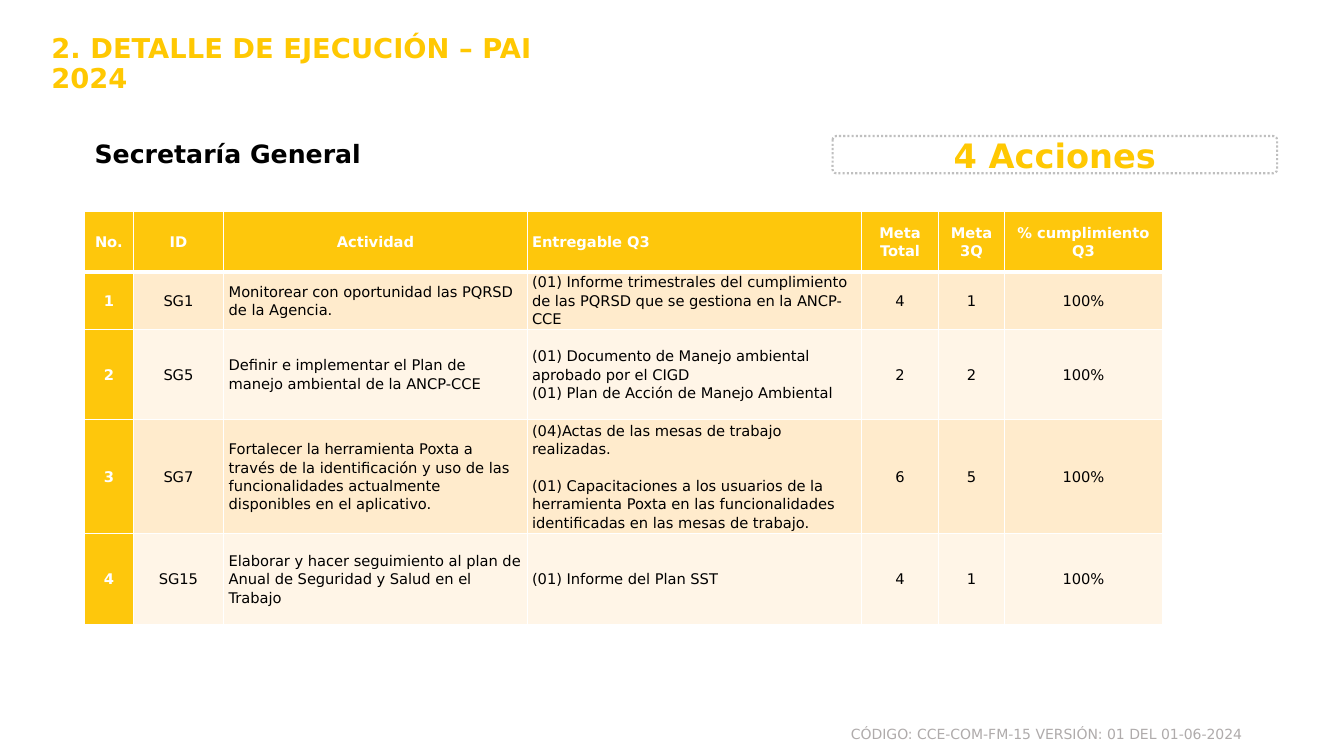
from lxml.etree import SubElement
from pptx import Presentation
from pptx.dml.color import RGBColor
from pptx.enum.dml import MSO_LINE
from pptx.enum.shapes import MSO_SHAPE
from pptx.enum.text import MSO_ANCHOR, MSO_AUTO_SIZE, PP_ALIGN
from pptx.oxml.ns import qn
from pptx.util import Pt

FONT = "DejaVu Sans"
GOLD, HEADER_GOLD = "FFC802", "FEC70C"
BANDS = ("FFEBCC", "FFF5E7")
WHITE, BLACK, GREY, DOTS = "FFFFFF", "000000", "AFABAB", "BFBFBF"

COLUMN_WIDTHS = (34.6, 64.8, 216.7, 239, 54.7, 47.5, 112.4)
ROW_HEIGHTS = (43.2, 40.7, 64.8, 81.4, 64.8)
LEFT_COLUMNS = (2, 3)
ACTIONS = (
    ("No.", "ID", "Actividad", "Entregable Q3", "Meta Total", "Meta 3Q", "% cumplimiento Q3"),
    ("1", "SG1", "Monitorear con oportunidad las PQRSD de la Agencia.",
     "(01) Informe trimestrales del cumplimiento de las PQRSD que se gestiona en la ANCP-CCE",
     "4", "1", "100%"),
    ("2", "SG5", "Definir e implementar el Plan de manejo ambiental de la ANCP-CCE",
     "(01) Documento de Manejo ambiental aprobado por el CIGD\v"
     "(01) Plan de Acción de Manejo Ambiental",
     "2", "2", "100%"),
    ("3", "SG7",
     "Fortalecer la herramienta Poxta a través de la identificación y uso de las "
     "funcionalidades actualmente disponibles en el aplicativo.",
     "(04)Actas de las mesas de trabajo realizadas.\n"
     "(01) Capacitaciones a los usuarios de la herramienta Poxta en las funcionalidades "
     "identificadas en las mesas de trabajo.",
     "6", "5", "100%"),
    ("4", "SG15",
     "Elaborar y hacer seguimiento al plan de Anual de Seguridad y Salud en el Trabajo",
     "(01) Informe del Plan SST", "4", "1", "100%"),
)


def color(value):
    return RGBColor.from_string(value)


class ActionSlide:
    def __init__(self, presentation):
        self.slide = presentation.slides.add_slide(presentation.slide_layouts[5])

    def set_text(self, frame, text, size, ink, bold=False, align=PP_ALIGN.LEFT, spacing=1.0):
        frame.text = text
        frame.word_wrap = True
        for paragraph in frame.paragraphs:
            paragraph.alignment = align
            paragraph.line_spacing = spacing
            for run in paragraph.runs:
                run.font.name = FONT
                run.font.size = Pt(size)
                run.font.bold = bold
                run.font.color.rgb = color(ink)

    def title(self, text, left, top, width, height):
        heading = self.slide.shapes.title
        heading.left, heading.top = Pt(left), Pt(top)
        heading.width, heading.height = Pt(width), Pt(height)
        frame = heading.text_frame
        self.set_text(frame, text, 19.5, GOLD, bold=True, spacing=0.9)
        frame.auto_size = MSO_AUTO_SIZE.NONE
        frame.vertical_anchor = MSO_ANCHOR.TOP

    def label(self, text, left, top, width, height, size, ink, bold=False, align=PP_ALIGN.LEFT):
        box = self.slide.shapes.add_textbox(Pt(left), Pt(top), Pt(width), Pt(height))
        self.set_text(box.text_frame, text, size, ink, bold, align)

    def badge(self, text, left, top, width, height):
        frame_shape = self.slide.shapes.add_shape(
            MSO_SHAPE.ROUNDED_RECTANGLE, Pt(left), Pt(top), Pt(width), Pt(height))
        frame_shape.adjustments[0] = 0.1
        frame_shape.shadow.inherit = False
        frame_shape.fill.background()
        frame_shape.line.color.rgb = color(DOTS)
        frame_shape.line.width = Pt(1.5)
        frame_shape.line.dash_style = MSO_LINE.ROUND_DOT
        frame_shape.text_frame.vertical_anchor = MSO_ANCHOR.MIDDLE
        self.set_text(frame_shape.text_frame, text, 24, GOLD, bold=True, align=PP_ALIGN.CENTER)

    def borders(self, cell, row):
        properties = cell._tc.get_or_add_tcPr()
        widths = {"a:lnL": 1, "a:lnR": 1, "a:lnT": 3 if row == 1 else 1,
                  "a:lnB": 3 if row == 0 else 1}
        for side, width in widths.items():
            edge = SubElement(properties, qn(side), w=str(Pt(width)))
            fill = SubElement(edge, qn("a:solidFill"))
            SubElement(fill, qn("a:srgbClr"), val=WHITE)

    def cell(self, cell, text, row, column):
        highlighted = row == 0 or column == 0
        centered = column not in LEFT_COLUMNS or (row == 0 and column == 2)
        self.set_text(cell.text_frame, text, 10.5, WHITE if highlighted else BLACK, highlighted,
                      PP_ALIGN.CENTER if centered else PP_ALIGN.LEFT, 1.07)
        paragraphs = cell.text_frame.paragraphs
        for paragraph in paragraphs[:-1]:
            paragraph.space_after = Pt(13)
        paragraphs[-1].space_after = Pt(8)
        cell.vertical_anchor = MSO_ANCHOR.MIDDLE
        cell.margin_left = cell.margin_right = Pt(3.5)
        cell.margin_top = cell.margin_bottom = 0
        self.borders(cell, row)
        cell.fill.solid()
        cell.fill.fore_color.rgb = color(HEADER_GOLD if highlighted else BANDS[(row - 1) % 2])

    def table(self, rows, left, top):
        grid = self.slide.shapes.add_table(
            len(rows), len(COLUMN_WIDTHS), Pt(left), Pt(top),
            Pt(sum(COLUMN_WIDTHS)), Pt(sum(ROW_HEIGHTS))).table
        for column, width in zip(grid.columns, COLUMN_WIDTHS):
            column.width = Pt(width)
        for row, height in zip(grid.rows, ROW_HEIGHTS):
            row.height = Pt(height)
        for row, texts in enumerate(rows):
            for column, text in enumerate(texts):
                self.cell(grid.cell(row, column), text, row, column)


def main():
    presentation = Presentation()
    presentation.slide_width, presentation.slide_height = Pt(960), Pt(540)
    page = ActionSlide(presentation)
    page.label("CÓDIGO: CCE-COM-FM-15 VERSIÓN: 01 DEL 01-06-2024",
               345.6, 514.8, 548.6, 19.4, 10, GREY, align=PP_ALIGN.RIGHT)
    page.label("Secretaría General", 60.5, 95, 595.4, 28.8, 18, BLACK,
               bold=True, align=PP_ALIGN.JUSTIFY)
    page.badge("4 Acciones", 594.7, 97.2, 317.5, 26.6)
    page.title("2. DETALLE DE EJECUCIÓN – PAI 2024", 29.5, 21.6, 396.7, 56.2)
    page.table(ACTIONS, 60.5, 151.2)
    presentation.save("out.pptx")


if __name__ == "__main__":
    main()
